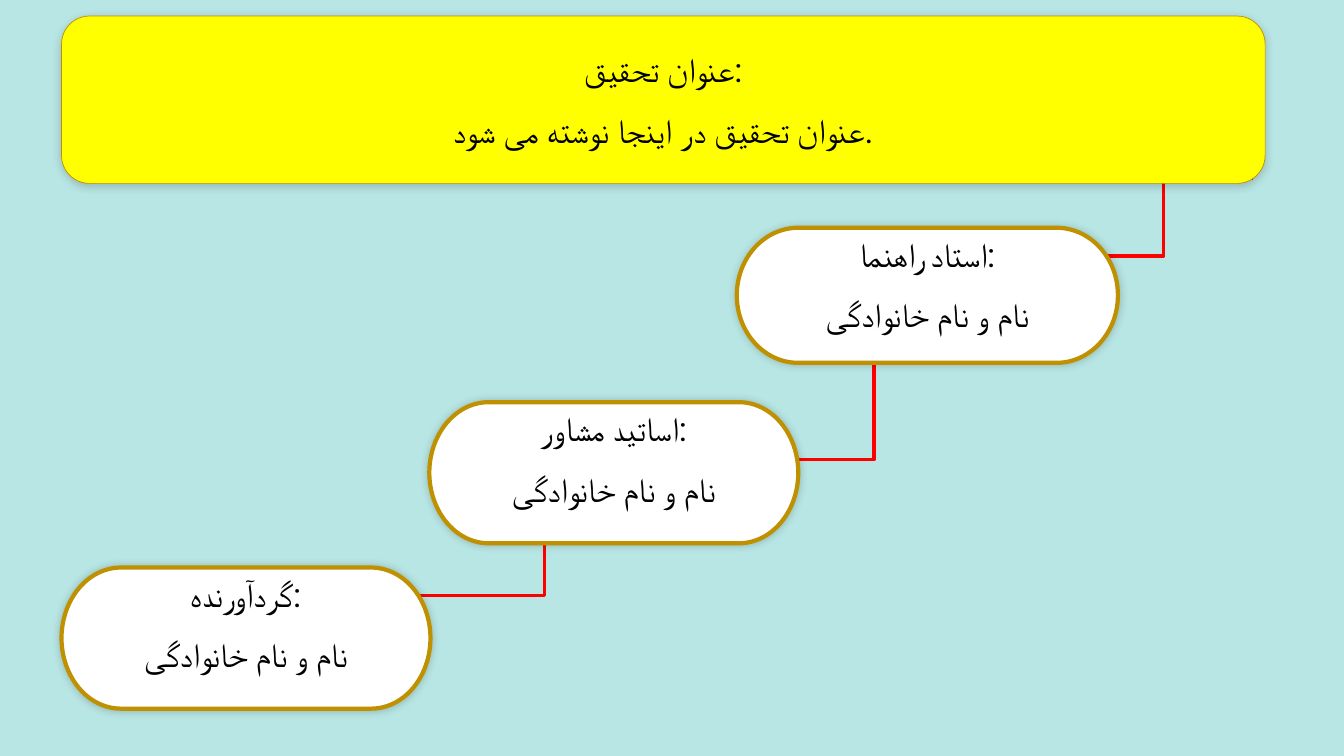
from lxml.etree import SubElement
from pptx import Presentation
from pptx.dml.color import RGBColor
from pptx.enum.shapes import MSO_CONNECTOR, MSO_SHAPE
from pptx.enum.text import MSO_ANCHOR, PP_ALIGN
from pptx.oxml import parse_xml
from pptx.oxml.ns import nsdecls, qn
from pptx.util import Pt

COLORS = {
    "background": "B8E6E4",
    "title": "FFFF00",
    "card": "FFFFFF",
    "border": "BF9000",
    "connector": "FF0000",
    "text": "000000",
    "shadow": "000000",
}


def color(name):
    return RGBColor.from_string(COLORS[name])


class SlideBuilder:
    font_name = "Roboto"
    font_size = 24

    def __init__(self, slide):
        self.slide = slide
        slide.background.fill.solid()
        slide.background.fill.fore_color.rgb = color("background")

    def box(self, kind, bounds, fill, line_width, shadow):
        """Draw a bordered box; shadow is its distance in points and angle in degrees."""
        shape = self.slide.shapes.add_shape(kind, *map(Pt, bounds))
        shape.fill.solid()
        shape.fill.fore_color.rgb = color(fill)
        shape.line.color.rgb = color("border")
        shape.line.width = Pt(line_width)
        distance, angle = shadow
        shape._element.spPr.append(parse_xml(
            f'<a:effectLst {nsdecls("a")}>'
            f'<a:outerShdw blurRad="{Pt(6)}" dist="{Pt(distance)}" dir="{angle * 60000}">'
            f'<a:srgbClr val="{COLORS["shadow"]}"><a:alpha val="20000"/></a:srgbClr>'
            '</a:outerShdw></a:effectLst>'))
        return shape

    def text(self, shape, lines, spacings, anchor, bottom=3.6):
        frame = shape.text_frame
        frame.word_wrap = True
        frame.vertical_anchor = anchor
        frame.margin_bottom = Pt(bottom)
        frame.text = "\n".join(lines)
        for paragraph, spacing in zip(frame.paragraphs, spacings):
            paragraph.alignment = PP_ALIGN.CENTER
            paragraph.line_spacing = spacing
            for run in paragraph.runs:
                run.font.size = Pt(self.font_size)
                run.font.name = self.font_name
                run.font.color.rgb = color("text")
                SubElement(run.font._element, qn("a:cs"), typeface=self.font_name)

    def title(self, bounds, lines):
        shape = self.box(MSO_SHAPE.ROUNDED_RECTANGLE, bounds, "title", 0.5, (1, 135))
        self.text(shape, lines, (1.5, 1.5), MSO_ANCHOR.TOP)

    def card(self, bounds, lines, bottom):
        shape = self.box(MSO_SHAPE.FLOWCHART_TERMINATOR, bounds, "card", 3, (0, 315))
        shape.text_frame.margin_top = 0
        self.text(shape, lines, (1.0, 1.5), MSO_ANCHOR.MIDDLE, bottom)

    def elbow(self, start, end):
        connector = self.slide.shapes.add_connector(
            MSO_CONNECTOR.ELBOW, *map(Pt, start + end))
        connector.line.color.rgb = color("connector")
        connector.line.width = Pt(2.25)
        SubElement(connector._element.spPr, qn("a:effectLst"))
        return connector

    def corner(self, start, end):
        """Draw a one-bend connector, given by its box before a quarter turn."""
        properties = self.elbow(start, end)._element.spPr
        properties.find(qn("a:prstGeom")).set("prst", "bentConnector2")
        properties.find(qn("a:xfrm")).set("rot", "5400000")


def main():
    presentation = Presentation()
    presentation.slide_width = Pt(960)
    presentation.slide_height = Pt(540)
    builder = SlideBuilder(presentation.slides.add_slide(presentation.slide_layouts[6]))

    person = "نام و نام خانوادگی"
    builder.corner((304.6, 340.6), (361.4, 452.9))
    builder.card((44, 405.4, 263.5, 100.8), ("گردآورنده:", person), 20)
    builder.elbow((895, 127.4), (767.5, 182.9))
    builder.title((44, 11.5, 859.7, 119.5),
                  ("عنوان تحقیق:", "عنوان تحقیق در اینجا نوشته می شود."))
    builder.elbow((693.4, 252.7), (555.1, 328.3))
    builder.card((306.7, 287.3, 263.5, 100.8), ("اساتید مشاور:", person), 20)
    builder.card((526.3, 162.7, 272.2, 96.5), ("استاد راهنما:", person), 16)

    presentation.save("out.pptx")


if __name__ == "__main__":
    main()
